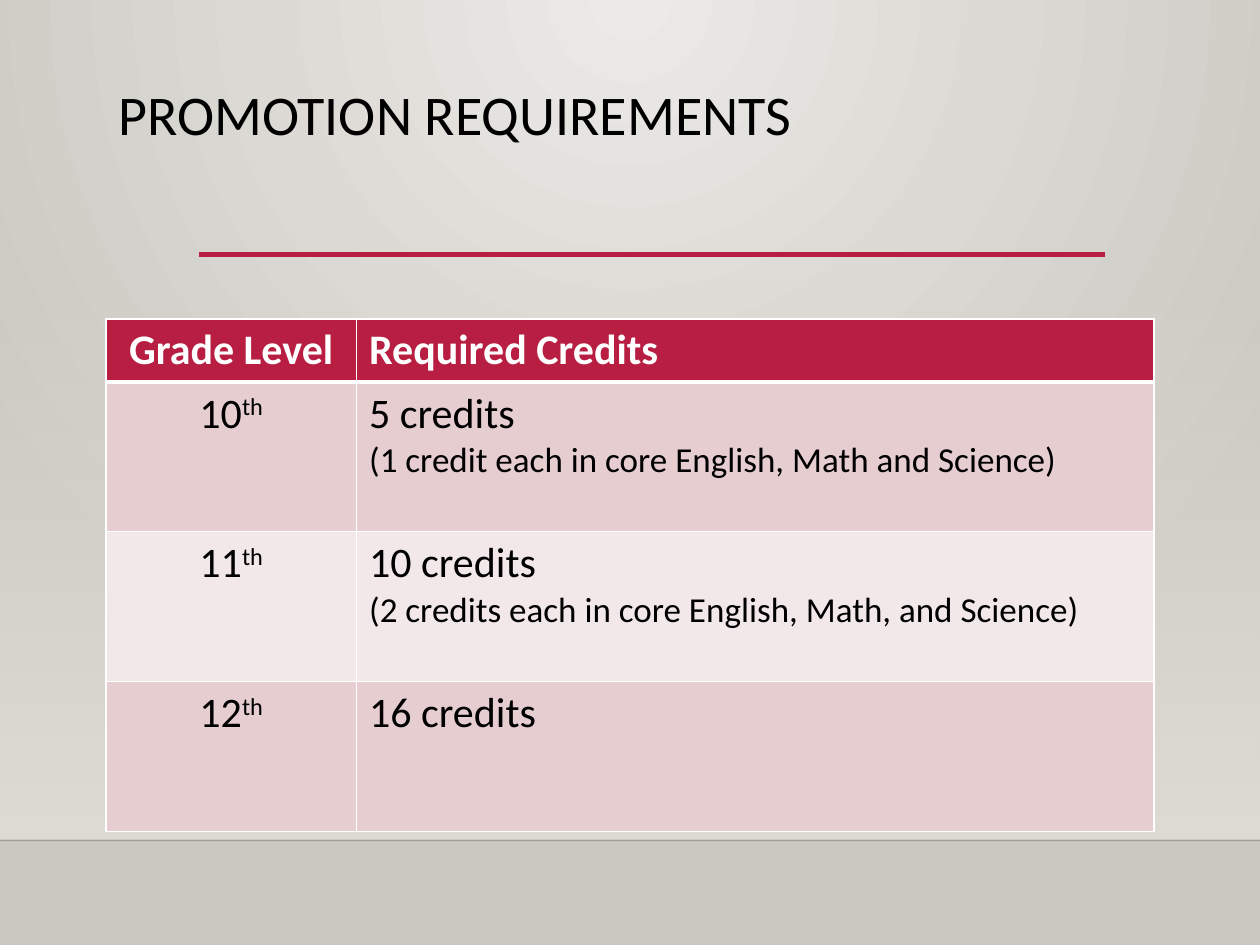
from dataclasses import dataclass

from lxml import etree
from pptx import Presentation
from pptx import util as u
from pptx.dml.color import RGBColor
from pptx.enum import shapes, text
from pptx.oxml import parse_xml
from pptx.oxml.ns import nsdecls, qn

COLORS = {
    "accent": "B71E42",
    "band_dark": "E6CDCF",
    "band_light": "F3E8E9",
    "center": "ECEAE7",
    "edge": "CAC7C1",
    "wall": "DFDBD5",
    "floor_line": "000001",
    "black": "000000",
    "white": "FFFFFF",
}
RADIAL = '<a:path path="circle"><a:fillToRect l="43000" t="0" r="43000" b="100000"/></a:path>'
DOWNWARD = '<a:lin ang="5400000" scaled="0"/>'


@dataclass
class Rule:
    left: float
    right: float
    top: float
    color: str
    width: float
    opacity: int = 100


@dataclass
class Grade:
    number: str
    credits: str
    detail: str = ""


RULES = [
    Rule(0, 10, 6.67, "floor_line", 1, 20),
    Rule(1.58, 8.77, 2.02, "accent", 2.5),
]
GRADES = [
    Grade("10", "5 credits", "(1 credit each in core English, Math and Science)"),
    Grade("11", "10 credits", "(2 credits each in core English, Math, and Science)"),
    Grade("12", "16 credits"),
]
COLUMN_WIDTHS = [1.99, 6.33]
HEADER_HEIGHT, GRADE_HEIGHT = 0.5, 1.19


def rgb(name: str) -> RGBColor:
    return RGBColor.from_string(COLORS[name])


def set_gradient(fill, owner, start: str, end: str, shade: str, start_opacity: int = 100) -> None:
    fill.gradient()
    gradient = owner.find(".//" + qn("a:gradFill"))
    gradient.getparent().replace(gradient, parse_xml(
        f'<a:gradFill {nsdecls("a")} rotWithShape="1"><a:gsLst>'
        f'<a:gs pos="0"><a:srgbClr val="{COLORS[start]}">'
        f'<a:alpha val="{start_opacity * 1000}"/></a:srgbClr></a:gs>'
        f'<a:gs pos="100000"><a:srgbClr val="{COLORS[end]}"/></a:gs>'
        f'</a:gsLst>{shade}</a:gradFill>'))


def add_rule(slide, rule: Rule) -> None:
    top = u.Inches(rule.top)
    connector = slide.shapes.add_connector(
        shapes.MSO_CONNECTOR.STRAIGHT, u.Inches(rule.left), top, u.Inches(rule.right), top)
    connector.line.width = u.Pt(rule.width)
    connector.line.color.rgb = rgb(rule.color)
    properties = connector._element.spPr
    color = properties.find(".//" + qn("a:srgbClr"))
    etree.SubElement(color, qn("a:alpha"), val=str(rule.opacity * 1000))
    etree.SubElement(properties, qn("a:effectLst"))


def add_run(paragraph, wording: str, size: int = 24, color: str = "black",
            bold: bool = False, superscript: bool = False) -> None:
    run = paragraph.add_run()
    run.text = wording
    formats = {"name": "Calibri", "size": u.Pt(size), "bold": bold}
    for name, value in formats.items():
        setattr(run.font, name, value)
    run.font.color.rgb = rgb(color)
    if superscript:
        run.font._element.set("baseline", "30000")


def style_cell(cell, fill: str, bottom_width: float = 1, top_width: float = 1) -> None:
    properties = cell._tc.get_or_add_tcPr()
    for side, width in {"L": 1, "R": 1, "T": top_width, "B": bottom_width}.items():
        properties.append(parse_xml(
            f'<a:ln{side} {nsdecls("a")} w="{u.Pt(width)}"><a:solidFill>'
            f'<a:srgbClr val="{COLORS["white"]}"/></a:solidFill></a:ln{side}>'))
    cell.fill.solid()
    cell.fill.fore_color.rgb = rgb(fill)


def add_title(slide, wording: str) -> None:
    box = slide.shapes.add_textbox(u.Inches(0.84), u.Inches(0.64), u.Inches(7.97), u.Inches(1.55))
    box.text_frame.word_wrap = True
    paragraph = box.text_frame.paragraphs[0]
    paragraph.line_spacing = 0.9
    add_run(paragraph, wording, 32)


def add_credit_table(slide, grades: list[Grade]) -> None:
    height = HEADER_HEIGHT + GRADE_HEIGHT * len(grades)
    table = slide.shapes.add_table(
        len(grades) + 1, len(COLUMN_WIDTHS), u.Inches(0.84), u.Inches(2.53),
        u.Inches(sum(COLUMN_WIDTHS)), u.Inches(height)).table
    for column, width in zip(table.columns, COLUMN_WIDTHS):
        column.width = u.Inches(width)
    for index, row in enumerate(table.rows):
        row.height = u.Inches(GRADE_HEIGHT if index else HEADER_HEIGHT)
        row.cells[0].text_frame.paragraphs[0].alignment = text.PP_ALIGN.CENTER

    for cell, heading in zip(table.rows[0].cells, ["Grade Level", "Required Credits"]):
        style_cell(cell, "accent", bottom_width=3)
        add_run(cell.text_frame.paragraphs[0], heading, color="white", bold=True)

    for index, grade in enumerate(grades, start=1):
        level, credit = table.rows[index].cells
        for cell in (level, credit):
            style_cell(cell, "band_dark" if index % 2 else "band_light",
                       top_width=3 if index == 1 else 1)
        add_run(level.text_frame.paragraphs[0], grade.number)
        add_run(level.text_frame.paragraphs[0], "th", superscript=True)
        add_run(credit.text_frame.paragraphs[0], grade.credits)
        if grade.detail:
            add_run(credit.text_frame.add_paragraph(), grade.detail, 20)


def main() -> None:
    presentation = Presentation()
    presentation.slide_width = u.Inches(10)
    presentation.slide_height = u.Inches(7.5)
    slide = presentation.slides.add_slide(presentation.slide_layouts[6])
    set_gradient(slide.background.fill, slide.element, "center", "edge", RADIAL)

    wall = slide.shapes.add_shape(
        shapes.MSO_SHAPE.RECTANGLE, 0, u.Inches(2.2), u.Inches(10), u.Inches(4.46))
    wall.shadow.inherit = False
    wall.line.fill.background()
    set_gradient(wall.fill, wall._element, "wall", "wall", DOWNWARD, start_opacity=0)

    for rule in RULES:
        add_rule(slide, rule)
    add_title(slide, "PROMOTION REQUIREMENTS")
    add_credit_table(slide, GRADES)
    presentation.save("out.pptx")


if __name__ == "__main__":
    main()
